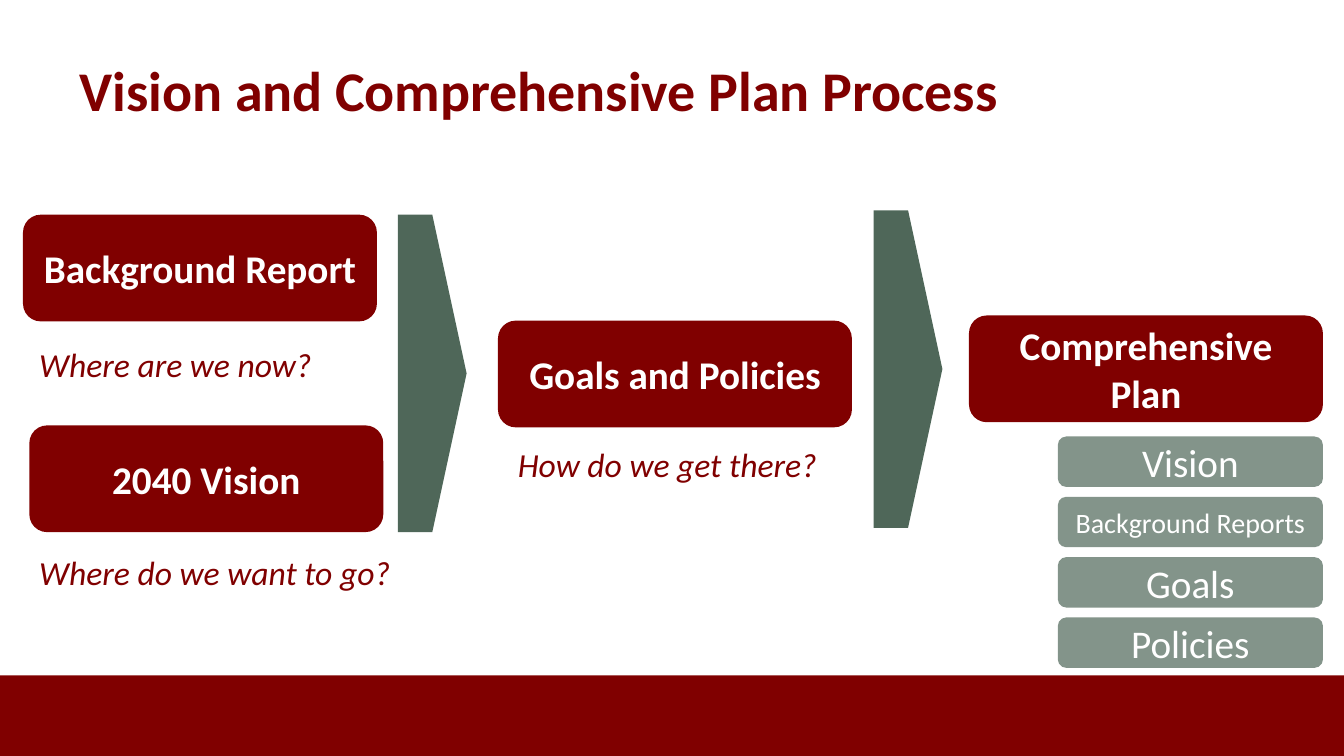
from dataclasses import dataclass

from pptx import Presentation
from pptx.dml.color import RGBColor
from pptx.enum.shapes import MSO_SHAPE as Shape
from pptx.enum.text import MSO_ANCHOR as Anchor, MSO_AUTO_SIZE as AutoSize, PP_ALIGN as Align
from pptx.oxml.ns import qn
from pptx.util import Cm, Pt
from lxml.etree import SubElement


@dataclass(frozen=True)
class Theme:
    font: str = "Calibri"
    maroon: RGBColor = RGBColor(0x80, 0x00, 0x00)
    green: RGBColor = RGBColor(0x4F, 0x67, 0x59)
    white: RGBColor = RGBColor(0xFF, 0xFF, 0xFF)
    title: int = 40
    heading: int = 28
    question: int = 24
    small: int = 20


@dataclass(frozen=True)
class Box:
    """A region in centimetres."""
    left: float
    top: float
    width: float
    height: float

    def lengths(self):
        return Cm(self.left), Cm(self.top), Cm(self.width), Cm(self.height)


THEME = Theme()
SLIDE = Box(0, 0, 33.87, 19.05)
STAGE_WIDTH, STAGE_HEIGHT = 8.92, 2.69
ARROW_WIDTH, ARROW_HEIGHT = 1.73, 8.0
PART_WIDTH, PART_HEIGHT, PART_STEP = 6.68, 1.27, 1.52


def write(frame, text, size, color, bold=False, italic=False,
          align=Align.LEFT, anchor=Anchor.TOP, autosize=AutoSize.NONE):
    frame.word_wrap = True
    frame.auto_size = autosize
    frame.vertical_anchor = anchor
    paragraph = frame.paragraphs[0]
    paragraph.alignment = align
    run = paragraph.add_run()
    run.text = text
    font = run.font
    font.name, font.size, font.color.rgb = THEME.font, Pt(size), color
    font.bold, font.italic = bold, italic


def add_block(slide, kind, box, color, opacity=100):
    block = slide.shapes.add_shape(kind, *box.lengths())
    block.shadow.inherit = False
    block.fill.solid()
    block.fill.fore_color.rgb = color
    block.line.fill.background()
    if opacity < 100:
        tint = block.fill._xPr.find(qn("a:solidFill"))[0]
        SubElement(tint, qn("a:alpha")).set("val", str(opacity * 1000))
    return block


def add_label(slide, box, text, color, size=THEME.heading, bold=False, opacity=100):
    label = add_block(slide, Shape.ROUNDED_RECTANGLE, box, color, opacity)
    write(label.text_frame, text, size, THEME.white, bold=bold,
          align=Align.CENTER, anchor=Anchor.MIDDLE)


def add_title(slide, box, text):
    title = slide.shapes.title
    title.left, title.top, title.width, title.height = box.lengths()
    write(title.text_frame, text, THEME.title, THEME.maroon, bold=True,
          autosize=AutoSize.SHAPE_TO_FIT_TEXT)


def add_stage(slide, box, heading, question=None, indent=0, drop=0, width=9):
    """A stage heading, with its guiding question set below the box."""
    add_label(slide, box, heading, THEME.maroon, bold=True)
    if question:
        place = Box(box.left + indent, box.top + drop, width, 1.28)
        caption = slide.shapes.add_textbox(*place.lengths())
        write(caption.text_frame, question, THEME.question, THEME.maroon,
              italic=True, autosize=AutoSize.SHAPE_TO_FIT_TEXT)


def add_plan(slide, box, heading, parts):
    """The final stage, with its parts stacked flush right below it."""
    add_stage(slide, box, heading)
    left = box.left + box.width - PART_WIDTH
    first_top = box.top + box.height + 0.36
    for index, (part, size) in enumerate(parts):
        place = Box(left, first_top + index * PART_STEP, PART_WIDTH, PART_HEIGHT)
        add_label(slide, place, part, THEME.green, size=size, opacity=70)


def build_process_slide(deck):
    slide = deck.slides.add_slide(deck.slide_layouts[5])

    # Footer band and title
    add_block(slide, Shape.RECTANGLE, Box(0, 17.02, SLIDE.width, 2.03), THEME.maroon)
    add_title(slide, Box(1.75, 1.27, 28.93, 1.96), "Vision and Comprehensive Plan Process")

    # Starting points, then goals
    add_stage(slide, Box(0.58, 5.41, STAGE_WIDTH, STAGE_HEIGHT), "Background Report",
              "Where are we now?", indent=0.16, drop=3.12)
    add_stage(slide, Box(0.74, 10.72, STAGE_WIDTH, STAGE_HEIGHT), "2040 Vision",
              "Where do we want to go?", drop=3.07, width=9.73)
    add_stage(slide, Box(12.55, 8.08, STAGE_WIDTH, STAGE_HEIGHT), "Goals and Policies",
              "How do we get there?", indent=0.25, drop=2.99)

    # Resulting plan and its contents
    add_plan(slide, Box(24.42, 7.95, STAGE_WIDTH, STAGE_HEIGHT), "Comprehensive Plan", [
        ("Vision", THEME.heading),
        ("Background Reports", THEME.small),
        ("Goals", THEME.heading),
        ("Policies", THEME.heading),
    ])

    # Arrows between the stages
    for left, top in ((10.03, 5.41), (22.02, 5.3)):
        add_block(slide, Shape.PENTAGON, Box(left, top, ARROW_WIDTH, ARROW_HEIGHT), THEME.green)


def main():
    deck = Presentation()
    deck.slide_width, deck.slide_height = Cm(SLIDE.width), Cm(SLIDE.height)
    build_process_slide(deck)
    deck.save("out.pptx")


if __name__ == "__main__":
    main()
